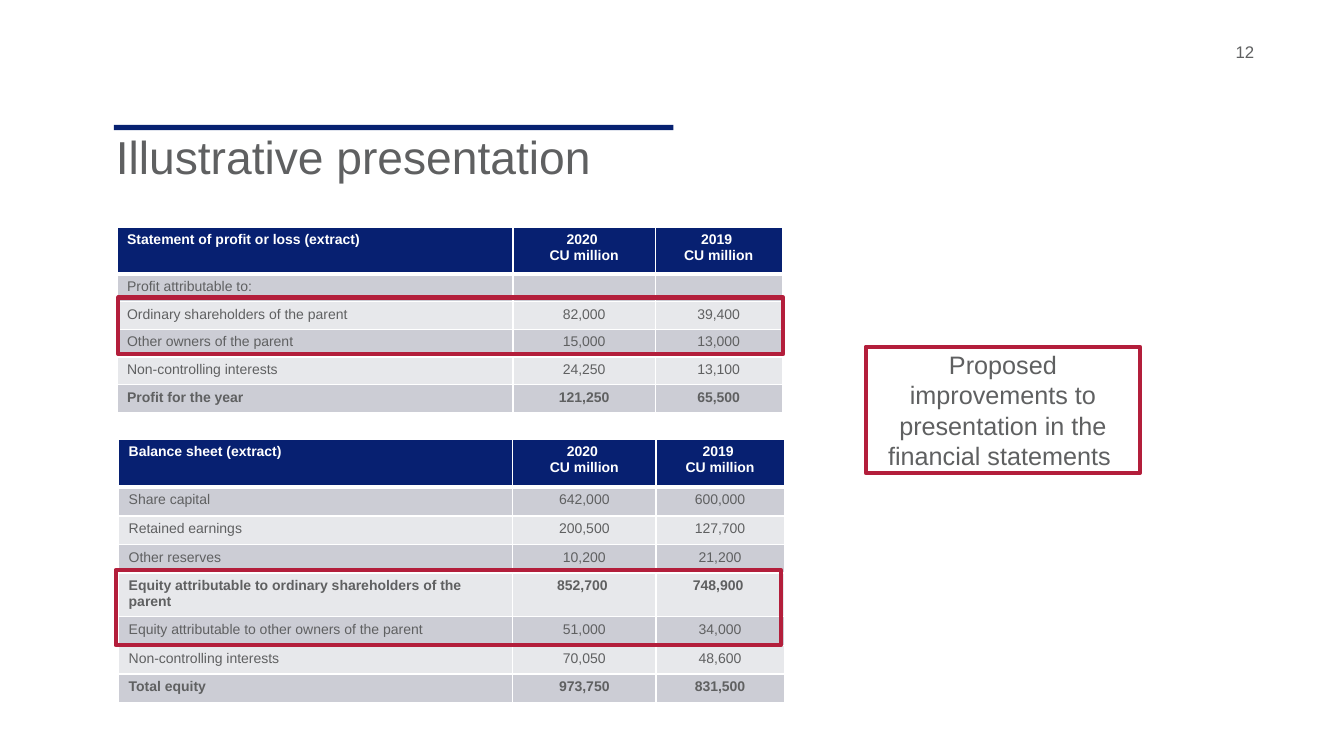
import pptx
import pptx.dml.color
import pptx.enum.shapes
import pptx.enum.text
import pptx.oxml.ns
import pptx.util
from lxml import etree
from pptx.util import Cm

COLORS = {
    "rule": "072171",
    "header": "072071",
    "dark_band": "CCCDD5",
    "light_band": "E7E8EB",
    "highlight": "B31E3B",
    "text": "5F6061",
    "white": "FFFFFF",
}
CENTER = pptx.enum.text.PP_ALIGN.CENTER
YEARS = ["2020 \vCU million", "2019 \vCU million"]

PROFIT_ROWS = [
    ["Statement of profit or loss (extract)", *YEARS],
    ["Profit attributable to:", "", ""],
    ["Ordinary shareholders of the parent", "82,000", "39,400"],
    ["Other owners of the parent", "15,000", "13,000"],
    ["Non-controlling interests", "24,250", "13,100"],
    ["Profit for the year", "121,250", "65,500"],
]
BALANCE_ROWS = [
    ["Balance sheet (extract)", *YEARS],
    ["Share capital", "642,000", "600,000"],
    ["Retained earnings", "200,500", "127,700"],
    ["Other reserves", "10,200", "21,200"],
    ["Equity attributable to ordinary shareholders of the parent", "852,700 ", "748,900 "],
    ["Equity attributable to other owners of the parent", "51,000", "34,000"],
    ["Non-controlling interests", "70,050", "48,600"],
    ["Total equity", "973,750", "831,500"],
]
BOLD_LABELS = {
    "Profit for the year",
    "Equity attributable to ordinary shareholders of the parent",
    "Total equity",
}


def rgb(name):
    return pptx.dml.color.RGBColor.from_string(COLORS[name])


def write(paragraph, text, size, color="text", bold=False, align=None):
    paragraph.text = text
    paragraph.alignment = align
    text_format = {"name": "Arial", "size": pptx.util.Pt(size), "bold": bold}
    for run in paragraph.runs:
        for attribute, value in text_format.items():
            setattr(run.font, attribute, value)
        run.font.color.rgb = rgb(color)
    if not text:
        # An empty cell would otherwise take the default 18 pt line height.
        paragraph._p.get_or_add_endParaRPr().set("sz", str(size * 100))


def add_label(slide, box, text, size):
    frame = slide.shapes.add_textbox(*box).text_frame
    frame_format = {"word_wrap": True, "margin_left": 0, "margin_top": 0,
                    "margin_right": 0, "margin_bottom": 0}
    for attribute, value in frame_format.items():
        setattr(frame, attribute, value)
    write(frame.paragraphs[0], text, size)


def add_title(slide, left, top, width, height):
    rule = slide.shapes.add_shape(
        pptx.enum.shapes.MSO_SHAPE.RECTANGLE, left, top, Cm(14.1), Cm(0.13))
    rule.shadow.inherit = False
    rule.fill.solid()
    rule.fill.fore_color.rgb = rgb("rule")
    rule.line.fill.background()
    title_box = (left + Cm(0.05), top + Cm(0.08), width, height)
    add_label(slide, title_box, "Illustrative presentation", 33)


def set_borders(cell, bottom_width):
    """Draw white lines round a cell, ahead of its fill in the XML order."""
    properties = cell._tc.get_or_add_tcPr()
    widths = {"lnL": 1, "lnR": 1, "lnT": 1, "lnB": bottom_width}
    for position, (side, width) in enumerate(widths.items()):
        line = etree.Element(pptx.oxml.ns.qn(f"a:{side}"), w=str(pptx.util.Pt(width)))
        fill = etree.SubElement(line, pptx.oxml.ns.qn("a:solidFill"))
        etree.SubElement(fill, pptx.oxml.ns.qn("a:srgbClr"), val=COLORS["white"])
        properties.insert(position, line)


def add_statement(slide, left, top, rows, column_widths, header_height, row_height):
    height = header_height + row_height * (len(rows) - 1)
    table = slide.shapes.add_table(
        len(rows), len(column_widths), left, top, sum(column_widths), height).table
    table.horz_banding = False
    for column, width in zip(table.columns, column_widths):
        column.width = width
    for row_index, values in enumerate(rows):
        is_header = row_index == 0
        table.rows[row_index].height = header_height if is_header else row_height
        band = "header" if is_header else ("light_band", "dark_band")[row_index % 2]
        for column_index, value in enumerate(values):
            cell = table.cell(row_index, column_index)
            cell.fill.solid()
            cell.fill.fore_color.rgb = rgb(band)
            set_borders(cell, 3 if is_header else 1)
            write(cell.text_frame.paragraphs[0], value, 10,
                  color="white" if is_header else "text",
                  bold=is_header or values[0] in BOLD_LABELS,
                  align=CENTER if column_index else None)


def add_highlight(slide, left, top, width, height):
    frame = slide.shapes.add_shape(
        pptx.enum.shapes.MSO_SHAPE.RECTANGLE, left, top, width, height)
    frame.shadow.inherit = False
    frame.fill.background()
    frame.line.color.rgb = rgb("highlight")
    frame.line.width = pptx.util.Pt(3)
    return frame


def add_callout(slide, left, top, width, height):
    callout = add_highlight(slide, left, top, width, height).text_frame
    callout.word_wrap = True
    callout.vertical_anchor = pptx.enum.text.MSO_ANCHOR.MIDDLE
    write(callout.paragraphs[0],
          "Proposed improvements to presentation in the financial statements ",
          18, align=CENTER)


def main():
    presentation = pptx.Presentation()
    presentation.slide_width = Cm(33.87)
    presentation.slide_height = Cm(19.05)
    slide = presentation.slides.add_slide(presentation.slide_layouts[6])

    add_title(slide, Cm(2.87), Cm(3.15), Cm(25.8), Cm(3.18))
    add_statement(slide, Cm(2.95), Cm(5.72), PROFIT_ROWS,
                  [Cm(9.98), Cm(3.58), Cm(3.2)], Cm(1.18), Cm(0.7))
    add_statement(slide, Cm(2.99), Cm(11.06), BALANCE_ROWS,
                  [Cm(9.93), Cm(3.61), Cm(3.23)], Cm(1.22), Cm(0.72))
    add_label(slide, (Cm(31.14), Cm(1.04), Cm(1.7), Cm(0.74)), "12", 12)
    add_highlight(slide, Cm(2.98), Cm(7.5), Cm(16.76), Cm(1.42))
    add_highlight(slide, Cm(2.92), Cm(14.36), Cm(16.76), Cm(1.9))
    add_callout(slide, Cm(21.82), Cm(8.74), Cm(6.91), Cm(3.18))

    presentation.save("out.pptx")


if __name__ == "__main__":
    main()
